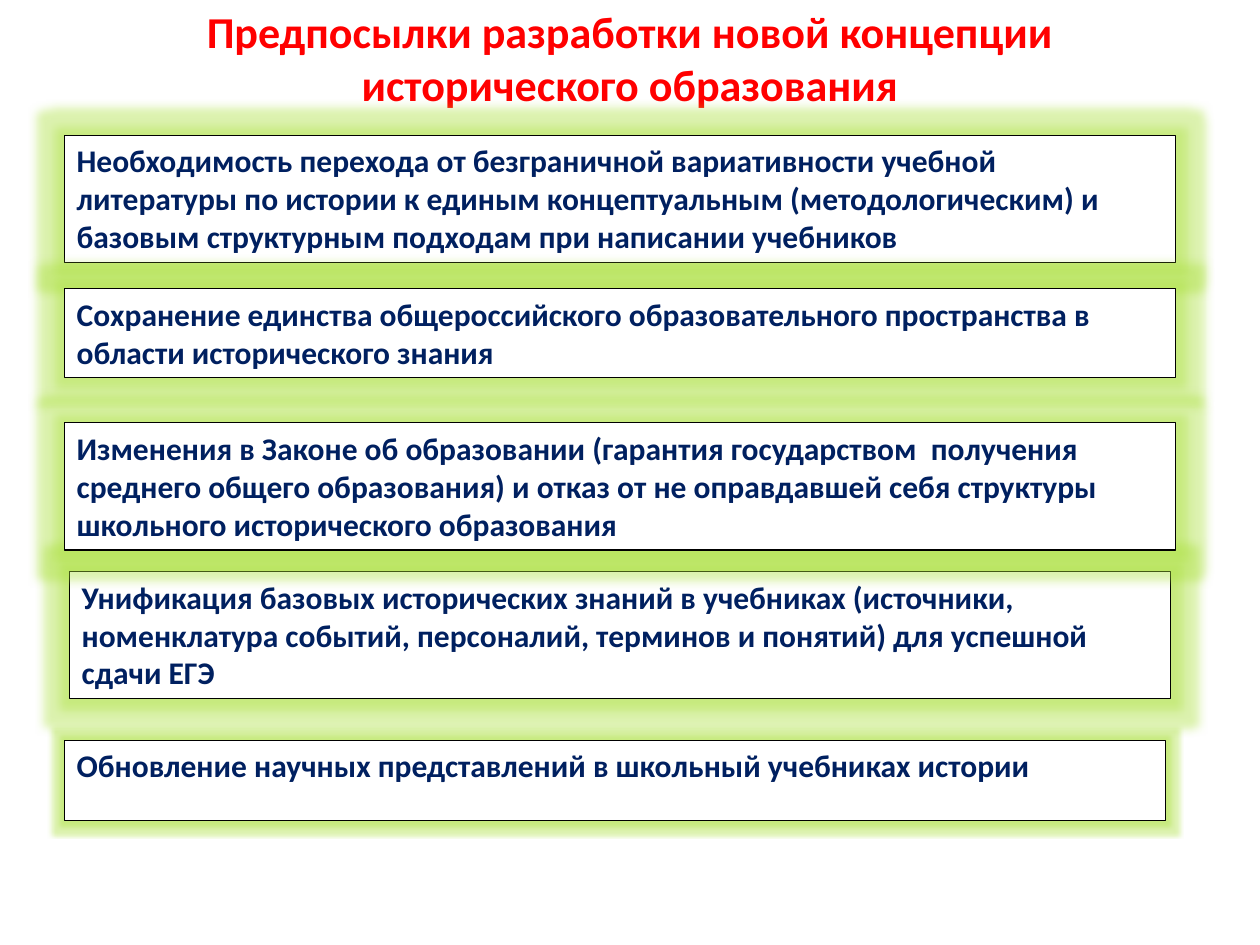
from lxml.etree import SubElement
from pptx import Presentation
from pptx.dml.color import RGBColor
from pptx.enum.shapes import MSO_SHAPE
from pptx.enum.text import MSO_ANCHOR, PP_ALIGN
from pptx.oxml.ns import qn
from pptx.util import Pt

REASONS = [
    ((36.7, 423, 629.3, 46), 5,
     "Обновление научных представлений в школьный учебниках истории"),
    ((36.7, 77.3, 635, 72.7), 11,
     "Необходимость перехода от безграничной вариативности учебной литературы по истории "
     "к единым концептуальным (методологическим) и базовым структурным подходам при "
     "написании учебников"),
    ((36.7, 165, 635, 50.9), 11,
     "Сохранение единства общероссийского образовательного пространства в области "
     "исторического знания"),
    ((39.6, 326.6, 629.3, 72.7), 11,
     "Унификация базовых исторических знаний в учебниках (источники, номенклатура событий, "
     "персоналий, терминов и понятий) для успешной сдачи ЕГЭ"),
    ((36.7, 241.6, 635, 72.7), 11,
     "Изменения в Законе об образовании (гарантия государством  получения среднего общего "
     "образования) и отказ от не оправдавшей себя структуры школьного исторического "
     "образования"),
]


def rgb(value):
    """Turn a hex string into a colour."""
    return RGBColor.from_string(value)


def set_text(tf, text, size, color, align, anchor):
    """Fill a text frame with one bold paragraph."""
    tf.word_wrap = True
    tf.vertical_anchor = anchor
    p = tf.paragraphs[0]
    p.text = text
    p.alignment = align
    p.font.name = "Calibri"
    p.font.size = Pt(size)
    p.font.bold = True
    p.font.color.rgb = rgb(color)


def add_glow(sp, radius, color, alpha):
    """Replace the shadow of a shape with a soft glow."""
    sp.shadow.inherit = False
    effects = sp._element.spPr.find(qn("a:effectLst"))
    glow = SubElement(effects, qn("a:glow"), rad=str(Pt(radius)))
    clr = SubElement(glow, qn("a:srgbClr"), val=color)
    SubElement(clr, qn("a:alpha"), val=str(alpha * 1000))


def add_title(s, box, text):
    """Place the centred red heading."""
    sp = s.shapes.add_textbox(*map(Pt, box))
    set_text(sp.text_frame, text, 25.2, "FF0000", PP_ALIGN.CENTER, MSO_ANCHOR.MIDDLE)


def add_reason(s, box, radius, text):
    """Place one framed statement with a green glow."""
    sp = s.shapes.add_shape(MSO_SHAPE.RECTANGLE, *map(Pt, box))
    sp.fill.solid()
    sp.fill.fore_color.rgb = rgb("FFFFFF")
    sp.line.color.rgb = rgb("000000")
    sp.line.width = Pt(0.75)
    add_glow(sp, radius, "A9E038", 40)
    set_text(sp.text_frame, text, 18, "002060", PP_ALIGN.LEFT, MSO_ANCHOR.TOP)


def main():
    """Build and save the slide."""
    prs = Presentation()
    prs.slide_width, prs.slide_height = Pt(720), Pt(540)
    s = prs.slides.add_slide(prs.slide_layouts[6])
    add_title(s, (0, 0, 720, 65.5),
              "Предпосылки разработки новой концепции\vисторического образования")
    for box, radius, text in REASONS:
        add_reason(s, box, radius, text)
    prs.save("out.pptx")


if __name__ == "__main__":
    main()
